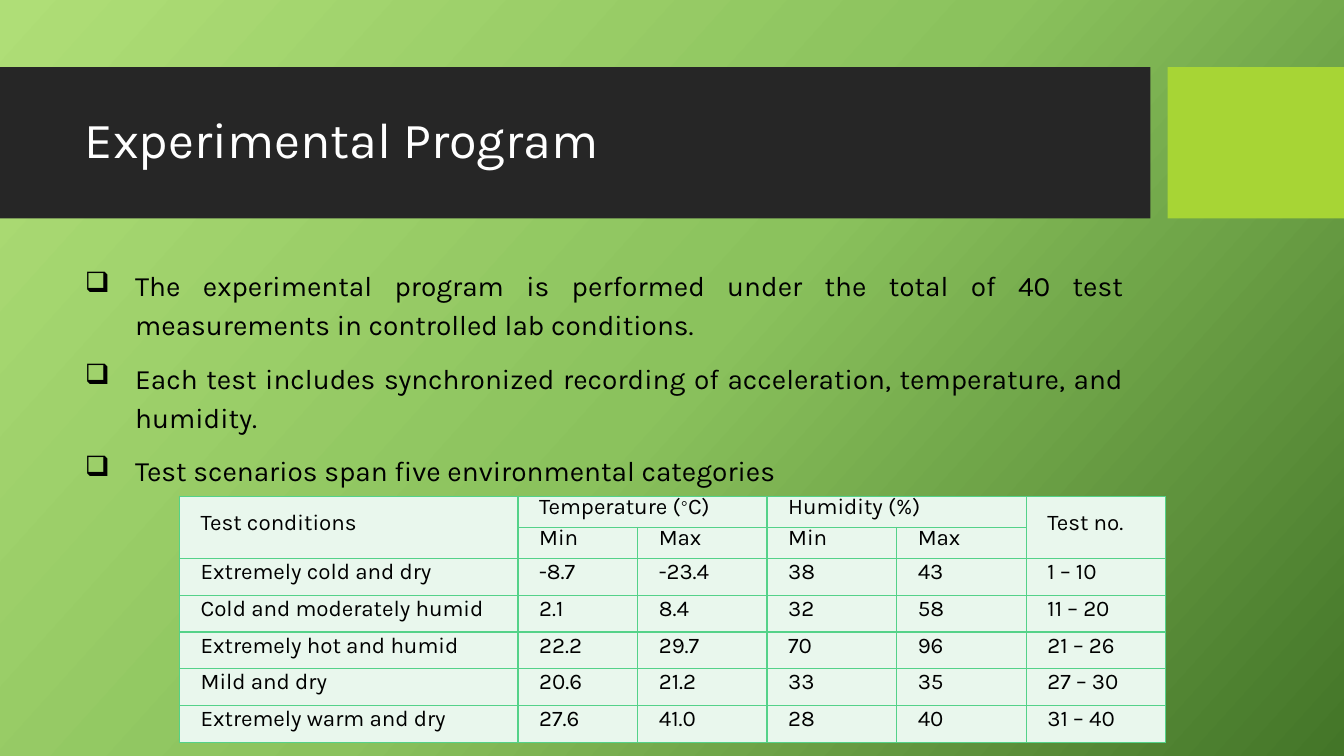
from lxml import etree
from pptx import Presentation
from pptx.dml.color import RGBColor
from pptx.enum.shapes import MSO_SHAPE
from pptx.enum.text import MSO_ANCHOR, PP_ALIGN
from pptx.oxml.ns import qn
from pptx.util import Pt

RECTANGLE = MSO_SHAPE.RECTANGLE
MIDDLE = MSO_ANCHOR.MIDDLE
JUSTIFY = PP_ALIGN.JUSTIFY

FONT = "Karla"
BLACK = RGBColor(0x00, 0x00, 0x00)
WHITE = RGBColor(0xFF, 0xFF, 0xFF)
CHARCOAL = RGBColor(0x26, 0x26, 0x26)
LIME = RGBColor(0xA7, 0xD5, 0x35)
MINT = RGBColor(0xE9, 0xF7, 0xED)
BORDER_GREEN = RGBColor(0x54, 0xD2, 0x89)
BACKGROUND_STOPS = [
    (0, RGBColor(0xAF, 0xDE, 0x77)),
    (50, RGBColor(0x8B, 0xC2, 0x5D)),
    (100, RGBColor(0x43, 0x75, 0x28)),
]
BACKGROUND_ANGLE = 42

POINTS = [
    "The experimental program is performed under the total of 40 test "
    "measurements in controlled lab conditions.",
    "Each test includes synchronized recording of acceleration, temperature, and humidity.",
    "Test scenarios span five environmental categories",
]

# A cell is a list of (text, baseline shift in percent) runs or a plain string
CONDITIONS = [
    ["Test conditions", [("Temperature (", 0), ("⸰", 30), ("C)", 0)], "",
     "Humidity (%)", "", "Test no."],
    ["", "Min", "Max", "Min", "Max", ""],
    ["Extremely cold and dry", "-8.7", "-23.4", "38", "43", "1 – 10"],
    ["Cold and moderately humid", "2.1", "8.4", "32", "58", "11 – 20"],
    ["Extremely hot and humid", "22.2", "29.7", "70", "96", "21 – 26"],
    ["Mild and dry", "20.6", "21.2", "33", "35", "27 – 30"],
    ["Extremely warm and dry", "27.6", "41.0", "28", "40", "31 – 40"],
]
COLUMN_WIDTHS = [241.8, 85.5, 92.4, 92.6, 92.6, 99.2]
HEADER_HEIGHT, ROW_HEIGHT = 22.1, 26.3
HEADER_MERGES = [((0, 0), (1, 0)), ((0, 1), (0, 2)), ((0, 3), (0, 4)), ((0, 5), (1, 5))]


def add_color(parent, color):
    etree.SubElement(parent, qn("a:srgbClr"), val=str(color))


def add_run(paragraph, text, size, color, baseline=0):
    run = paragraph.add_run()
    run.text = text
    run.font.size = Pt(size)
    run.font.name = FONT
    run.font.color.rgb = color
    if baseline:
        run._r.get_or_add_rPr().set("baseline", str(baseline * 1000))


def set_indent(paragraph, margin, first_line):
    properties = paragraph._p.get_or_add_pPr()
    properties.set("marL", str(Pt(margin)))
    properties.set("indent", str(Pt(first_line)))
    return properties


def paint_background(slide):
    fill = slide.background.fill
    fill.gradient()
    gradient = slide.background._cSld.find(".//" + qn("a:gradFill"))
    stops = gradient.find(qn("a:gsLst"))
    for stop in list(stops):
        stops.remove(stop)
    for position, color in BACKGROUND_STOPS:
        stop = etree.SubElement(stops, qn("a:gs"), pos=str(position * 1000))
        add_color(stop, color)
    gradient.find(qn("a:lin")).set("ang", str(BACKGROUND_ANGLE * 60000))


def add_block(slide, left, top, width, height, color):
    block = slide.shapes.add_shape(RECTANGLE, Pt(left), Pt(top), Pt(width), Pt(height))
    block.shadow.inherit = False
    block.fill.solid()
    block.fill.fore_color.rgb = color
    block.line.fill.background()


def add_title_band(slide, left, top, width, height):
    # Dark band and the lime block that closes it on the right
    accent_width, gap = 126, 12.2
    band_width = width - accent_width - gap
    add_block(slide, left, top, band_width, height, CHARCOAL)
    add_block(slide, left + width - accent_width, top, accent_width, height, LIME)

    # Title
    title = slide.shapes.add_textbox(
        Pt(left + 53.5), Pt(top + 11), Pt(756.5), Pt(85)).text_frame
    title.word_wrap = True
    title.vertical_anchor = MIDDLE
    paragraph = title.paragraphs[0]
    paragraph.line_spacing = 0.9
    add_run(paragraph, "Experimental Program", 36, WHITE)


def add_points(slide, left, top, width, height):
    frame = slide.shapes.add_textbox(Pt(left), Pt(top), Pt(width), Pt(height)).text_frame
    frame.word_wrap = True
    for index, text in enumerate(POINTS):
        paragraph = frame.add_paragraph() if index else frame.paragraphs[0]
        properties = set_indent(paragraph, 36, -36)
        etree.SubElement(properties, qn("a:buChar"), char="❑")
        paragraph.alignment = JUSTIFY
        paragraph.line_spacing = Pt(28)
        if index:
            paragraph.space_before = Pt(10)
        add_run(paragraph, text, 20, BLACK)


def style_cell(cell):
    properties = cell._tc.get_or_add_tcPr()
    for side in ("lnL", "lnR", "lnT", "lnB"):
        border = etree.SubElement(properties, qn("a:" + side), w=str(Pt(1)))
        add_color(etree.SubElement(border, qn("a:solidFill")), BORDER_GREEN)
    cell.fill.solid()
    cell.fill.fore_color.rgb = MINT
    cell.vertical_anchor = MIDDLE
    cell.margin_left = cell.margin_right = Pt(3.6)
    cell.margin_top = cell.margin_bottom = 0


def add_conditions_table(slide, left, top):
    heights = [HEADER_HEIGHT] * 2 + [ROW_HEIGHT] * (len(CONDITIONS) - 2)
    table = slide.shapes.add_table(
        len(CONDITIONS), len(COLUMN_WIDTHS), Pt(left), Pt(top),
        Pt(sum(COLUMN_WIDTHS)), Pt(sum(heights))).table
    table.first_row = False
    table.horz_banding = False
    for column, width in zip(table.columns, COLUMN_WIDTHS):
        column.width = Pt(width)
    for row, height in zip(table.rows, heights):
        row.height = Pt(height)

    # Cell text
    for row, contents in zip(table.rows, CONDITIONS):
        for cell, content in zip(row.cells, contents):
            style_cell(cell)
            if not content:
                continue
            paragraph = cell.text_frame.paragraphs[0]
            set_indent(paragraph, 0, 11.5)
            paragraph.line_spacing = Pt(12)
            runs = [(content, 0)] if isinstance(content, str) else content
            for text, baseline in runs:
                add_run(paragraph, text, 16, BLACK, baseline)

    # Two-level header
    for first, last in HEADER_MERGES:
        table.cell(*first).merge(table.cell(*last))


def main():
    presentation = Presentation()
    presentation.slide_width = Pt(960)
    presentation.slide_height = Pt(540)
    slide = presentation.slides.add_slide(presentation.slide_layouts[6])
    paint_background(slide)
    add_title_band(slide, 0, 48, 960, 108)
    add_points(slide, 53.5, 184.3, 756.5, 332.6)
    add_conditions_table(slide, 128.2, 354.7)
    presentation.save("out.pptx")


if __name__ == "__main__":
    main()
